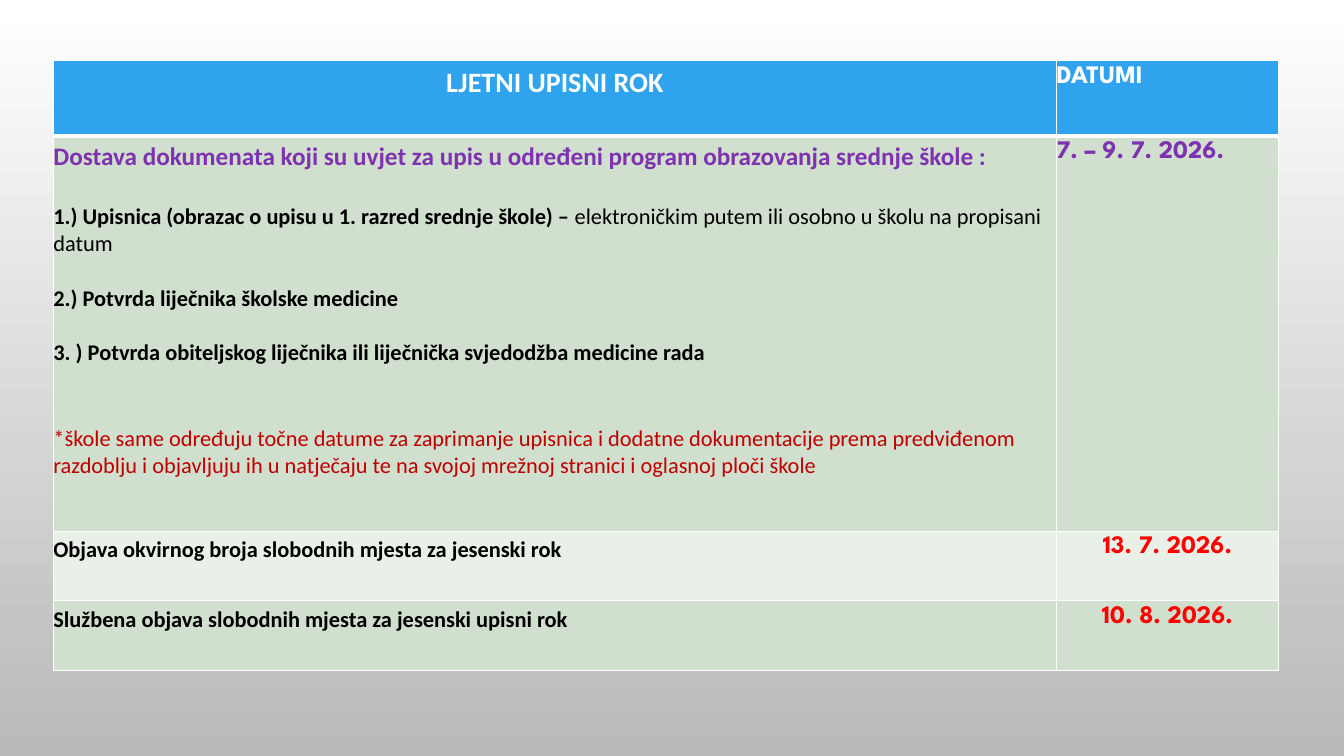
from dataclasses import dataclass

from lxml import etree
from pptx import Presentation
from pptx.dml.color import RGBColor
from pptx.enum.text import PP_ALIGN as Align
from pptx.oxml.ns import qn
from pptx.util import Inches, Pt

PURPLE, BLACK, WHITE = "7E32B0", "000000", "FFFFFF"
DARK_RED, RED = "C00000", "FF0000"
BLUE, GREEN, PALE_GREEN = "2FA3EE", "D1DFCE", "E9F0E8"
BODY_FONT, DATE_FONT = "Calibri", "League Spartan"


@dataclass
class Line:
    bold_text: str = ""
    plain_text: str = ""
    size: int = 16
    color: str = BLACK
    font: str = BODY_FONT
    align: Align = Align.LEFT
    space_before: float = 0


@dataclass
class Row:
    height: float
    fill: str
    content: list[Line]
    date: Line


def rgb(value: str) -> RGBColor:
    return RGBColor.from_string(value)


def add_border(cell, side: str, width: float) -> None:
    properties = cell._tc.get_or_add_tcPr()
    line = etree.SubElement(properties, qn(f"a:ln{side}"), w=str(Pt(width)))
    fill = etree.SubElement(line, qn("a:solidFill"))
    etree.SubElement(fill, qn("a:srgbClr"), val=WHITE)


def write_line(paragraph, line: Line) -> None:
    paragraph.alignment = line.align
    if line.space_before:
        paragraph.space_before = Pt(line.space_before)
    for text, bold in ((line.bold_text, True), (line.plain_text, False)):
        if text:
            run = paragraph.add_run()
            run.text = text
            run.font.size = Pt(line.size)
            run.font.name = line.font
            run.font.bold = bold
            run.font.color.rgb = rgb(line.color)


def fill_cell(cell, lines: list[Line], fill: str, top: float, bottom: float) -> None:
    cell.margin_left = cell.margin_right = 0
    cell.margin_top = cell.margin_bottom = Inches(0.05)
    for side, width in (("L", 1), ("R", 1), ("T", top), ("B", bottom)):
        add_border(cell, side, width)
    cell.fill.solid()
    cell.fill.fore_color.rgb = rgb(fill)
    frame = cell.text_frame
    for index, line in enumerate(lines):
        write_line(frame.add_paragraph() if index else frame.paragraphs[0], line)


def date_line(text: str, color: str, align: Align = Align.LEFT) -> Line:
    return Line(text, size=18, color=color, font=DATE_FONT, align=align)


COLUMN_WIDTHS = (9.95, 2.2)
ROWS = [
    Row(0.75, BLUE,
        [Line("LJETNI UPISNI ROK", size=20, color=WHITE, align=Align.CENTER)],
        date_line("DATUMI", WHITE)),
    Row(3.92, GREEN, [
        Line("Dostava dokumenata koji su uvjet za upis u određeni program "
             "obrazovanja srednje škole :", size=18, color=PURPLE),
        Line("1.) Upisnica (obrazac o upisu u 1. razred srednje škole) – ",
             "elektroničkim putem ili osobno u školu na propisani datum",
             space_before=22),
        Line("2.) Potvrda liječnika školske medicine", space_before=19.5),
        Line("3. ) Potvrda obiteljskog liječnika ili liječnička svjedodžba "
             "medicine rada", space_before=19.5),
        Line(plain_text="*škole same određuju točne datume za zaprimanje upisnica i "
             "dodatne dokumentacije prema predviđenom razdoblju i objavljuju ih u "
             "natječaju te na svojoj mrežnoj stranici i oglasnoj ploči škole",
             color=DARK_RED, space_before=41.5),
    ], date_line("7. – 9. 7. 2026.", PURPLE)),
    Row(0.69, PALE_GREEN,
        [Line("Objava okvirnog broja slobodnih mjesta za jesenski rok")],
        date_line("13. 7. 2026.", RED, Align.CENTER)),
    Row(0.69, GREEN,
        [Line("Službena objava slobodnih mjesta za jesenski upisni rok")],
        date_line("10. 8. 2026.", RED, Align.CENTER)),
]


def main() -> None:
    presentation = Presentation()
    presentation.slide_width, presentation.slide_height = Inches(13.33), Inches(7.5)
    slide = presentation.slides.add_slide(presentation.slide_layouts[6])

    # Background gradient, top to bottom
    background = slide.background.fill
    background.gradient()
    background.gradient_angle = 270
    for stop, position, color in zip(background.gradient_stops, (0, 1), (WHITE, "B9B9B9")):
        stop.position = position
        stop.color.rgb = rgb(color)

    # Enrolment schedule
    table = slide.shapes.add_table(
        len(ROWS), len(COLUMN_WIDTHS), Inches(0.53), Inches(0.6),
        Inches(sum(COLUMN_WIDTHS)), Inches(sum(row.height for row in ROWS))).table
    for column, width in zip(table.columns, COLUMN_WIDTHS):
        column.width = Inches(width)
    for index, row in enumerate(ROWS):
        table.rows[index].height = Inches(row.height)
        top, bottom = (3 if index == 1 else 1), (3 if index == 0 else 1)
        for column, lines in enumerate((row.content, [row.date])):
            fill_cell(table.cell(index, column), lines, row.fill, top, bottom)

    presentation.save("out.pptx")


if __name__ == "__main__":
    main()
